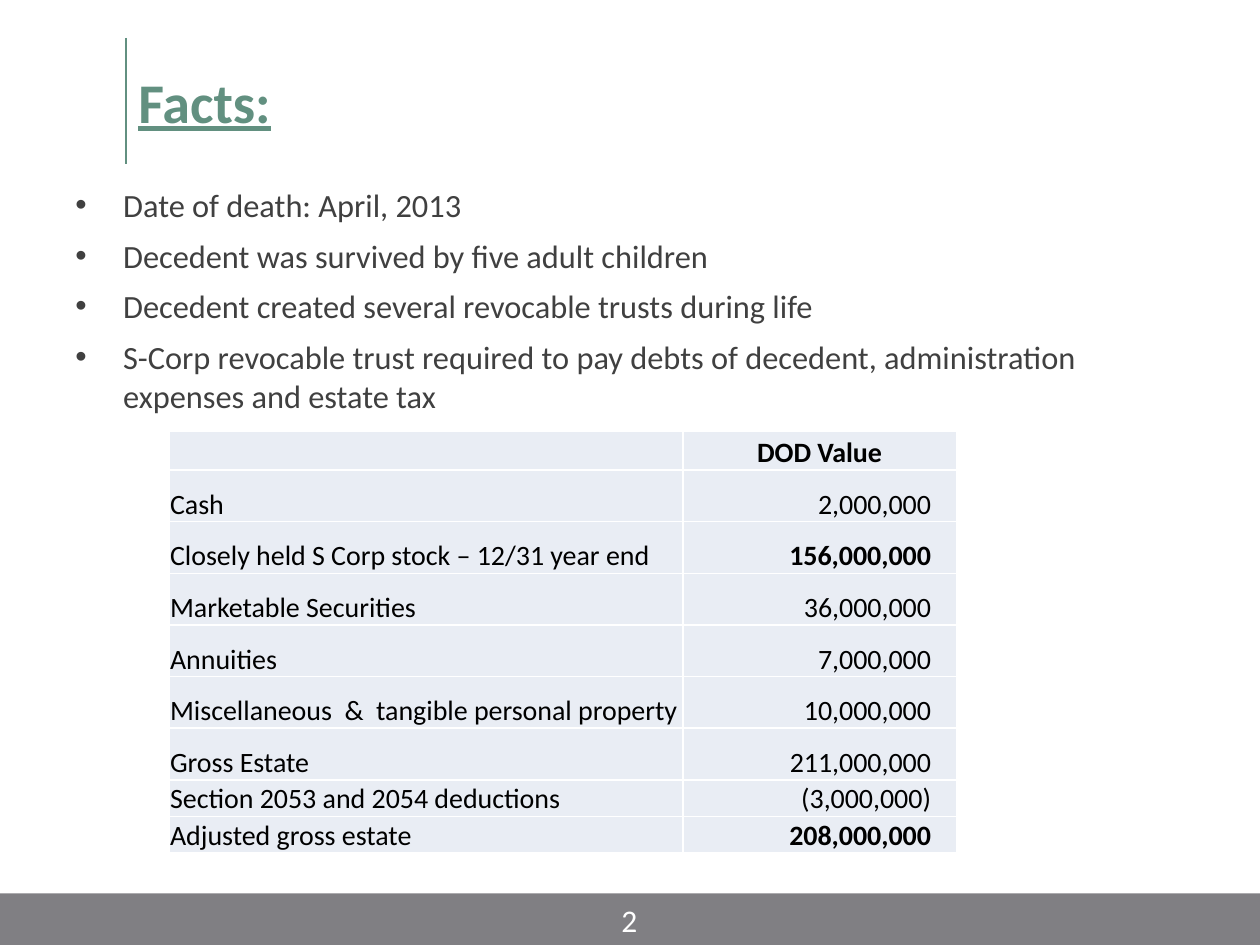
from dataclasses import dataclass

from lxml.etree import SubElement
from pptx import Presentation
from pptx.dml.color import RGBColor
from pptx.enum.shapes import MSO_CONNECTOR, MSO_SHAPE
from pptx.enum.text import MSO_ANCHOR, PP_ALIGN
from pptx.oxml.ns import qn
from pptx.util import Inches, Pt

COLORS = {
    "green": "629080",
    "gray": "807F83",
    "body": "404040",
    "black": "000000",
    "white": "FFFFFF",
    "cell": "E9EDF4",
}
FONT = "Calibri"


@dataclass
class AssetRow:
    label: str
    value: str
    height: float = 0.41
    bold_value: bool = False
    align: PP_ALIGN = PP_ALIGN.RIGHT


FACTS = [
    "Date of death: April, 2013",
    "Decedent was survived by five adult children",
    "Decedent created several revocable trusts during life",
    "S-Corp revocable trust required to pay debts of decedent, "
    "administration expenses and estate tax",
]
ROWS = [
    AssetRow("", "DOD Value", 0.28, True, PP_ALIGN.CENTER),
    AssetRow("Cash", "2,000,000"),
    AssetRow("Closely held S Corp stock – 12/31 year end", "156,000,000", bold_value=True),
    AssetRow("Marketable Securities", "36,000,000"),
    AssetRow("Annuities", "7,000,000"),
    AssetRow("Miscellaneous  &  tangible personal property", "10,000,000"),
    AssetRow("Gross Estate", "211,000,000"),
    AssetRow("Section 2053 and 2054 deductions", "(3,000,000)", 0.29),
    AssetRow("Adjusted gross estate", "208,000,000", 0.29, True),
]


def rgb(name: str) -> RGBColor:
    return RGBColor.from_string(COLORS[name])


def write(p, text: str, *, size: float, color: str, bold: bool = False,
          underline: bool = False, align: PP_ALIGN = PP_ALIGN.LEFT) -> None:
    p.alignment = align
    r = p.add_run()
    r.text = text
    f = r.font
    f.name, f.size, f.bold, f.underline = FONT, Pt(size), bold, underline
    f.color.rgb = rgb(color)


def add_box(s, x: float, y: float, w: float, h: float, anchor=MSO_ANCHOR.TOP):
    tf = s.shapes.add_textbox(Inches(x), Inches(y), Inches(w), Inches(h)).text_frame
    tf.word_wrap = True
    tf.vertical_anchor = anchor
    return tf


def add_bar(s) -> None:
    sp = s.shapes.add_shape(MSO_SHAPE.RECTANGLE, 0, Inches(7.09), Inches(10), Inches(0.42))
    sp.shadow.inherit = False
    sp.fill.solid()
    sp.fill.fore_color.rgb = rgb("gray")
    sp.line.fill.background()


def add_rule(s) -> None:
    cx = s.shapes.add_connector(MSO_CONNECTOR.STRAIGHT, Inches(1), Inches(0.3),
                                Inches(1), Inches(1.3))
    cx.line.color.rgb = rgb("green")
    cx.line.width = Pt(1.5)
    SubElement(cx._element.spPr, qn("a:effectLst"))


def add_bullets(tf, items: list[str]) -> None:
    for i, item in enumerate(items):
        p = tf.add_paragraph() if i else tf.paragraphs[0]
        pPr = p._p.get_or_add_pPr()
        pPr.set("marL", str(Inches(0.38)))
        pPr.set("indent", str(-Inches(0.38)))
        SubElement(pPr, qn("a:buFont"), typeface="Arial")
        SubElement(pPr, qn("a:buChar"), char="•")
        p.space_before = Pt(3.7 if i else 0)
        p.space_after = Pt(3)
        write(p, item, size=18.5, color="body")


def add_borders(cell) -> None:
    tcPr = cell._tc.get_or_add_tcPr()
    for side in ("lnL", "lnR", "lnT", "lnB"):
        ln = SubElement(tcPr, qn(f"a:{side}"), w=str(Pt(1)))
        fill = SubElement(ln, qn("a:solidFill"))
        SubElement(fill, qn("a:srgbClr"), val=COLORS["white"])


def fill_cell(cell, text: str, bold: bool, align: PP_ALIGN) -> None:
    add_borders(cell)
    cell.fill.solid()
    cell.fill.fore_color.rgb = rgb("cell")
    cell.vertical_anchor = MSO_ANCHOR.BOTTOM
    cell.margin_left = cell.margin_top = Inches(0.01)
    cell.margin_right = Inches(0.2 if align == PP_ALIGN.RIGHT else 0.01)
    cell.margin_bottom = 0
    write(cell.text_frame.paragraphs[0], text, size=16, color="black", bold=bold, align=align)


def add_estate_table(s, rows: list[AssetRow]) -> None:
    height = sum(row.height for row in rows)
    tbl = s.shapes.add_table(len(rows), 2, Inches(1.34), Inches(3.42),
                             Inches(6.25), Inches(height)).table
    tbl.first_row = tbl.horz_banding = False
    for col, width in zip(tbl.columns, (4.08, 2.17)):
        col.width = Inches(width)
    for i, row in enumerate(rows):
        tbl.rows[i].height = Inches(row.height)
        fill_cell(tbl.cell(i, 0), row.label, False, PP_ALIGN.LEFT)
        fill_cell(tbl.cell(i, 1), row.value, row.bold_value, row.align)


def main() -> None:
    prs = Presentation()
    prs.slide_width, prs.slide_height = Inches(10), Inches(7.5)
    s = prs.slides.add_slide(prs.slide_layouts[6])
    add_bar(s)
    add_rule(s)
    title = add_box(s, 1, 0.3, 8.5, 1, MSO_ANCHOR.MIDDLE)
    write(title.paragraphs[0], "Facts:", size=32, color="green", bold=True, underline=True)
    add_bullets(add_box(s, 0.5, 1.42, 8.83, 1.83), FACTS)
    add_estate_table(s, ROWS)
    number = add_box(s, 3.83, 7.1, 2.33, 0.4)
    write(number.paragraphs[0], "2", size=18, color="white", align=PP_ALIGN.CENTER)
    prs.save("out.pptx")


if __name__ == "__main__":
    main()
